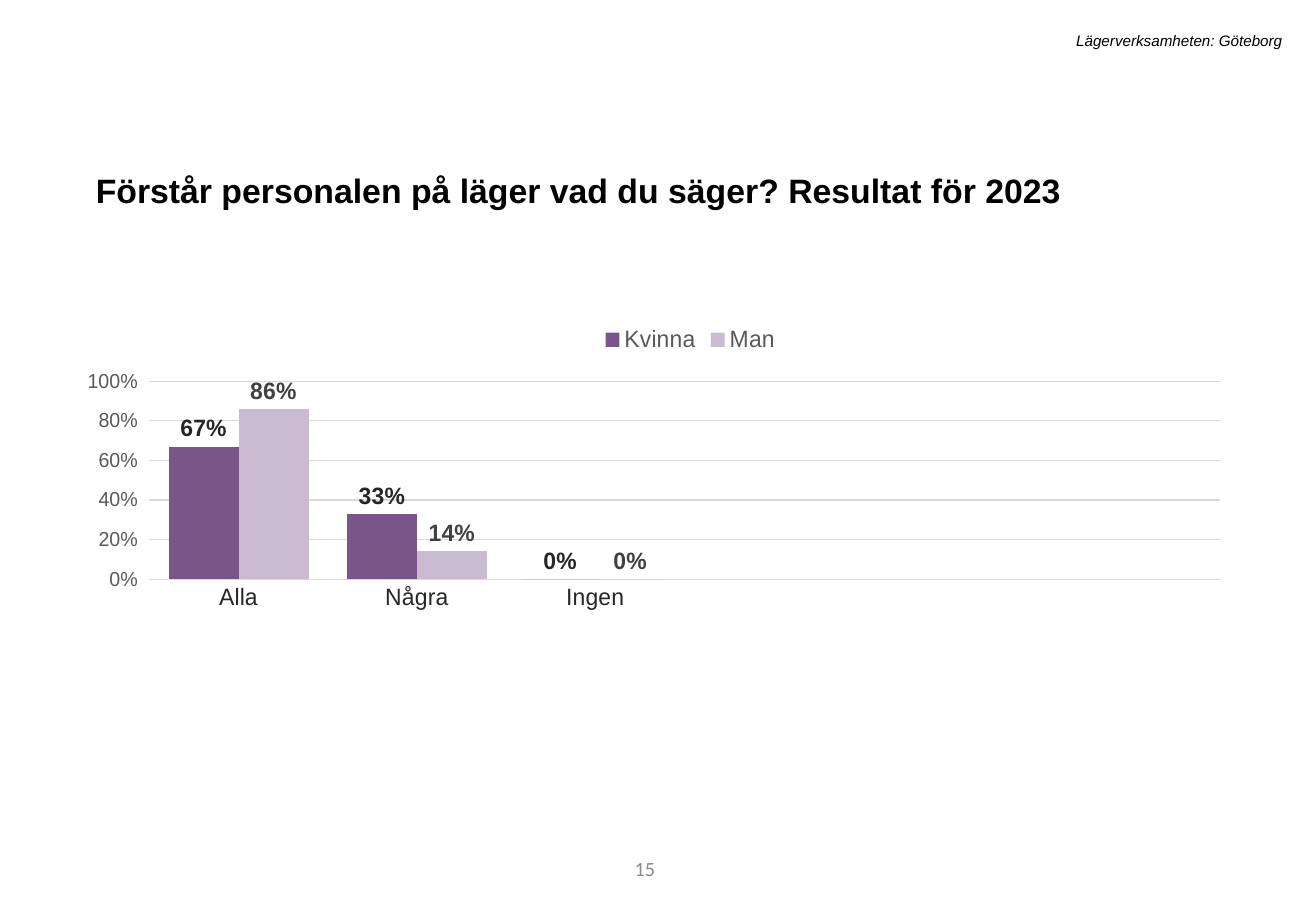
from lxml import etree
from pptx import Presentation
from pptx.chart.data import CategoryChartData
from pptx.dml.color import RGBColor
from pptx.enum import chart as charts, text
from pptx.oxml import parse_xml
from pptx.oxml.ns import nsdecls
from pptx.util import Inches, Pt

HEADER = "Lägerverksamheten: Göteborg"
TITLE = "Förstår personalen på läger vad du säger? Resultat för 2023"
PAGE = "15"
ANSWERS = ["Alla", "Några", "Ingen", "", "", ""]
# name, shares, bar colour, label colour
GROUPS = [
    ("Kvinna", (0.67, 0.33, 0, None, None, None), "7A5589", "262626"),
    ("Man", (0.86, 0.14, 0, None, None, None), "CABBD0", "404040"),
]
PLOT = {"x": 0.025, "y": 0.154, "w": 0.966, "h": 0.413}
LEGEND = {"x": 0.43, "y": 0.03}
GRID = "D9D9D9"


def color(target, value):
    target.rgb = RGBColor.from_string(value)


def style(font, size, value, name="Arial", bold=False, italic=False):
    font.name, font.size, font.bold, font.italic = name, Pt(size), bold, italic
    color(font.color, value)


def add_line(slide, box, words, size, value, align, **looks):
    """Add a one-paragraph text box and return its frame and paragraph."""
    frame = slide.shapes.add_textbox(*map(Inches, box)).text_frame
    frame.word_wrap = True
    paragraph = frame.paragraphs[0]
    paragraph.text = words
    paragraph.alignment = align
    style(paragraph.font, size, value, **looks)
    return frame, paragraph


def layout_xml(place, inner=False):
    target = '<c:layoutTarget val="inner"/>' if inner else ""
    modes = "".join(f'<c:{side}Mode val="edge"/>' for side in "xy")
    sizes = "".join(f'<c:{side} val="{share}"/>' for side, share in place.items())
    return parse_xml(f'<c:layout {nsdecls("c")}><c:manualLayout>{target}{modes}{sizes}'
                     "</c:manualLayout></c:layout>")


def thin_line(line):
    color(line.color, GRID)
    line.width = Pt(0.75)


def add_answers(slide):
    data = CategoryChartData(number_format="0%")
    data.categories = ANSWERS
    for name, shares, _, _ in GROUPS:
        data.add_series(name, shares)
    chart = slide.shapes.add_chart(charts.XL_CHART_TYPE.COLUMN_CLUSTERED,
                                   *map(Inches, (0.72, 2.53, 9.4, 3.95)), data).chart
    style(chart.font, 10, "000000")
    chart.has_title = False

    chart.has_legend = True
    legend = chart.legend
    legend.position = charts.XL_LEGEND_POSITION.TOP
    legend.include_in_layout = False
    style(legend.font, 14, "595959")

    answers, shares_axis = chart.category_axis, chart.value_axis
    answers.major_tick_mark = charts.XL_TICK_MARK.NONE
    style(answers.tick_labels.font, 14, "262626")
    thin_line(answers.format.line)

    shares_axis.minimum_scale, shares_axis.maximum_scale = 0, 1
    shares_axis.major_unit = 0.2
    shares_axis.major_tick_mark = charts.XL_TICK_MARK.OUTSIDE
    shares_axis.tick_labels.number_format = "0%"
    shares_axis.tick_labels.number_format_is_linked = False
    style(shares_axis.tick_labels.font, 12, "595959")
    shares_axis.format.line.fill.background()
    thin_line(shares_axis.major_gridlines.format.line)

    plot = chart.plots[0]
    plot.gap_width, plot.overlap = 55, 0
    plot.vary_by_categories = False
    for bars, (_, _, fill, label) in zip(plot.series, GROUPS):
        bars.format.fill.solid()
        color(bars.format.fill.fore_color, fill)
        labels = bars.data_labels
        labels.show_value = True
        labels.position = charts.XL_LABEL_POSITION.OUTSIDE_END
        labels.number_format = "0%"
        labels.number_format_is_linked = False
        style(labels.font, 14, label, bold=True)

    plot_area = chart._chartSpace.chart.plotArea
    for old in plot_area.xpath("c:layout") + legend._element.xpath("c:layout"):
        old.getparent().remove(old)
    plot_area.insert(0, layout_xml(PLOT, inner=True))
    legend._element.xpath("c:legendPos")[0].addnext(layout_xml(LEGEND))


def main():
    deck = Presentation()
    deck.slide_width, deck.slide_height = Inches(10.83), Inches(7.5)
    slide = deck.slides.add_slide(deck.slide_layouts[6])
    right, left = text.PP_ALIGN.RIGHT, text.PP_ALIGN.LEFT

    page, _ = add_line(slide, (3.05, 6.95, 2.44, 0.4), PAGE, 12, "8C8C8C", right,
                       name="Calibri")
    page.vertical_anchor = text.MSO_ANCHOR.MIDDLE
    add_answers(slide)
    _, title = add_line(slide, (0.69, 1.28, 9.4, 0.47), TITLE, 20, "000000", left, bold=True)
    title.line_spacing, title.space_before = 1.2, Pt(10)
    add_line(slide, (1.79, 0.21, 8.86, 0.25), HEADER, 9, "000000", right, italic=True)
    deck.save("out.pptx")


if __name__ == "__main__":
    main()
